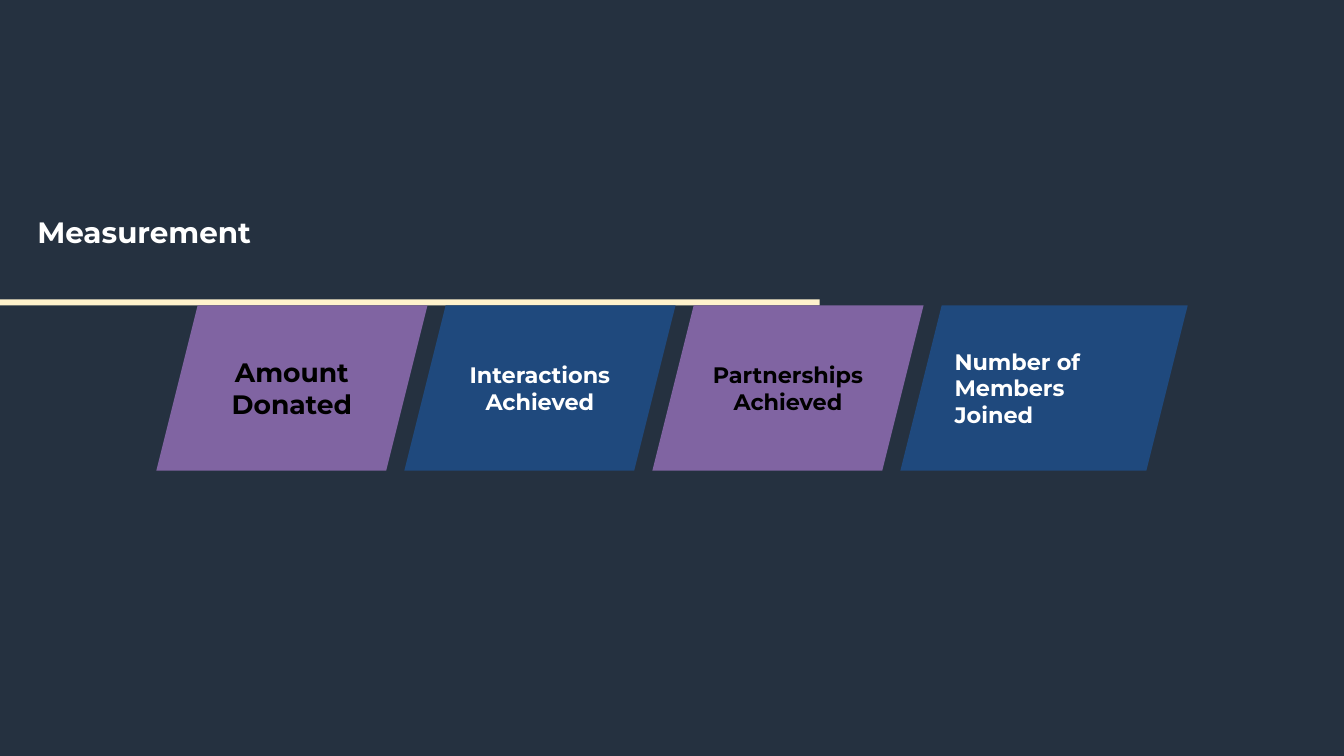
from dataclasses import dataclass

from pptx import Presentation
from pptx import util as u
from pptx.dml.color import RGBColor
from pptx.enum import shapes, text

NAVY = RGBColor(0x25, 0x31, 0x40)
CREAM = RGBColor(0xFF, 0xF2, 0xCC)
PURPLE = RGBColor(0x80, 0x64, 0xA2)
BLUE = RGBColor(0x1F, 0x49, 0x7D)
WHITE = RGBColor(0xFF, 0xFF, 0xFF)
BLACK = RGBColor(0, 0, 0)

FONT = "Montserrat"
INSET = u.Inches(0.13)
FRAME_FORMAT = {
    "word_wrap": True,
    "margin_left": INSET,
    "margin_top": INSET,
    "margin_right": INSET,
    "margin_bottom": INSET,
}

CARD_LEFT, CARD_TOP, CARD_HEIGHT = 1.55, 3.03, 1.64
CARD_STEP = 2.46


@dataclass
class Card:
    label: str
    fill: RGBColor
    color: RGBColor
    size: int = 16
    width: float = 2.69
    align: text.PP_ALIGN = text.PP_ALIGN.CENTER


CARDS = [
    Card("Amount Donated", PURPLE, BLACK, size=19),
    Card("Interactions Achieved", BLUE, WHITE),
    Card("Partnerships Achieved", PURPLE, BLACK),
    Card("Number of Members Joined", BLUE, WHITE, width=2.85,
         align=text.PP_ALIGN.LEFT),
]


def add_filled(page, kind: shapes.MSO_SHAPE, left: float, top: float,
               width: float, height: float, color: RGBColor):
    """Add a flat preset shape without outline or shadow."""
    shape = page.shapes.add_shape(kind, u.Inches(left), u.Inches(top),
                                  u.Inches(width), u.Inches(height))
    shape.shadow.inherit = False
    shape.fill.solid()
    shape.fill.fore_color.rgb = color
    shape.line.fill.background()
    return shape


def write(box, label: str, size: int, color: RGBColor,
          align: text.PP_ALIGN, anchor: text.MSO_ANCHOR) -> None:
    frame = box.text_frame
    for name, value in {**FRAME_FORMAT, "vertical_anchor": anchor}.items():
        setattr(frame, name, value)
    para = frame.paragraphs[0]
    para.alignment = align
    span = para.add_run()
    span.text = label
    for name, value in {"name": FONT, "size": u.Pt(size), "bold": True}.items():
        setattr(span.font, name, value)
    span.font.color.rgb = color


def add_card(page, index: int, card: Card) -> None:
    shape = add_filled(page, shapes.MSO_SHAPE.PARALLELOGRAM,
                       CARD_LEFT + index * CARD_STEP, CARD_TOP,
                       card.width, CARD_HEIGHT, card.fill)
    shape.adjustments[0] = 0.25
    write(shape, card.label, card.size, card.color, card.align,
          text.MSO_ANCHOR.MIDDLE)


def main() -> None:
    deck = Presentation()
    deck.slide_width, deck.slide_height = u.Inches(13.33), u.Inches(7.5)
    page = deck.slides.add_slide(deck.slide_layouts[6])
    page.background.fill.solid()
    page.background.fill.fore_color.rgb = NAVY

    add_filled(page, shapes.MSO_SHAPE.RECTANGLE, 0, 2.97, 8.13, 0.06, CREAM)
    title = page.shapes.add_textbox(u.Inches(0.24), u.Inches(1.99),
                                    u.Inches(3.35), u.Inches(0.62))
    write(title, "Measurement", 21, WHITE, text.PP_ALIGN.LEFT,
          text.MSO_ANCHOR.TOP)
    for index, card in enumerate(CARDS):
        add_card(page, index, card)

    deck.save("out.pptx")


if __name__ == "__main__":
    main()
